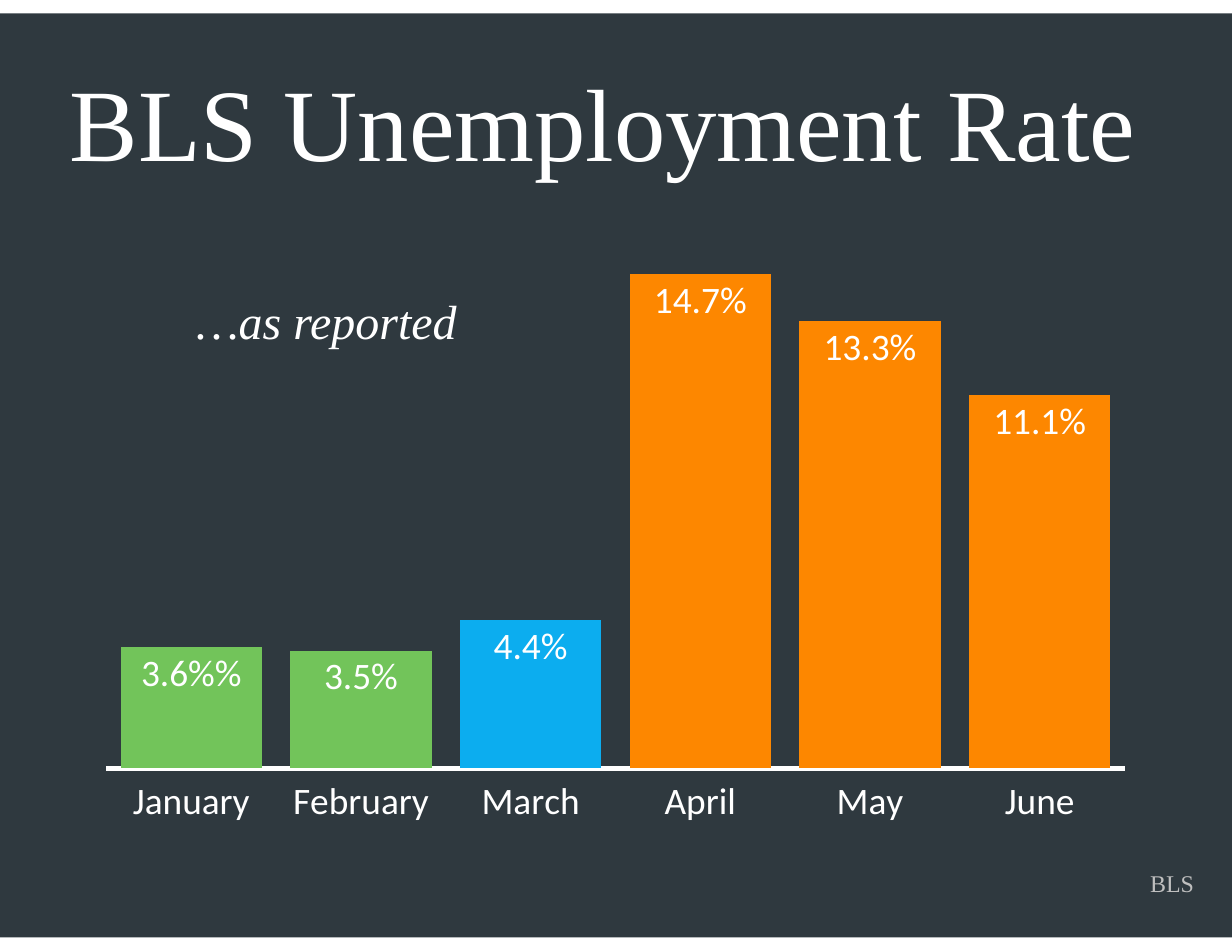
from lxml import etree
from pptx import Presentation
from pptx.chart.data import CategoryChartData
from pptx.dml.color import RGBColor
from pptx.enum.chart import (XL_CHART_TYPE as ChartType, XL_LABEL_POSITION as LabelPos,
                             XL_TICK_LABEL_POSITION as TickPos, XL_TICK_MARK as TickMark)
from pptx.enum.shapes import MSO_SHAPE
from pptx.enum.text import PP_ALIGN
from pptx.oxml.ns import qn
from pptx.util import Inches, Pt

WHITE = RGBColor(0xFF, 0xFF, 0xFF)
SLATE = RGBColor(0x2F, 0x39, 0x3F)
GREY = RGBColor(0xBF, 0xBF, 0xBF)
GREEN = RGBColor(0x72, 0xC4, 0x5A)
BLUE = RGBColor(0x0C, 0xAD, 0xEF)
ORANGE = RGBColor(0xFD, 0x87, 0x00)
SERIF, SANS = "Times New Roman", "Calibri"
WIDTH, HEIGHT = 11, 8.5

# Content: month, unemployment rate, bar colour
RATES = [
    ("January", 0.036, GREEN),
    ("February", 0.035, GREEN),
    ("March", 0.044, BLUE),
    ("April", 0.147, ORANGE),
    ("May", 0.133, ORANGE),
    ("June", 0.111, ORANGE),
]
CUSTOM_LABELS = {0: "3.6%%"}
# Text, box, alignment, wrap, font; the title's last space shifts its centring
TEXTS = [
    ("BLS", (10.16, 7.71, 0.6, 0.36), PP_ALIGN.RIGHT, False,
     {"size": Pt(15.4), "name": SERIF}, GREY),
    ("BLS Unemployment Rate ", (0, 0.48, WIDTH, 1.21), PP_ALIGN.CENTER, True,
     {"size": Pt(66), "name": SERIF}, WHITE),
    ("…as reported", (0.77, 2.55, 4.29, 0.62), PP_ALIGN.CENTER, True,
     {"size": Pt(30.8), "name": SERIF, "italic": True}, WHITE),
]
CHART_BOX = (0.8, 2.03, 9.43, 5.69)
PLOT = {"x": 0.016, "y": 0.005, "w": 0.964, "h": 0.844}  # shares of the chart
CHART_FONT = {"size": Pt(24), "name": SANS}


def set_font(font, values, color):
    for key, value in values.items():
        setattr(font, key, value)
    font.color.rgb = color


def add_text(slide, text, box, align, wrap, values, color):
    tf = slide.shapes.add_textbox(*map(Inches, box)).text_frame
    tf.word_wrap = wrap
    p = tf.paragraphs[0]
    p.alignment = align
    r = p.add_run()
    r.text = text
    set_font(r.font, values, color)


def set_plot_layout(chart):
    area = chart.plots[0]._element.getparent()
    for old in area.findall(qn("c:layout")):
        area.remove(old)
    layout = etree.Element(qn("c:layout"))
    area.insert(0, layout)
    manual = etree.SubElement(layout, qn("c:manualLayout"))
    settings = {"layoutTarget": "inner", "xMode": "edge", "yMode": "edge", **PLOT}
    for tag, value in settings.items():
        etree.SubElement(manual, qn(f"c:{tag}")).set("val", str(value))


def add_rate_chart(slide):
    data = CategoryChartData(number_format="0.0%")
    data.categories = [month for month, _, _ in RATES]
    data.add_series("Series 1", [rate for _, rate, _ in RATES])
    chart = slide.shapes.add_chart(ChartType.COLUMN_STACKED,
                                   *map(Inches, CHART_BOX), data).chart
    chart.has_legend = chart.has_title = False
    set_font(chart.font, CHART_FONT, WHITE)
    set_plot_layout(chart)

    # Axes
    months, rates = chart.category_axis, chart.value_axis
    months.major_tick_mark = months.minor_tick_mark = TickMark.NONE
    months.tick_label_position = TickPos.LOW
    set_font(months.tick_labels.font, CHART_FONT, WHITE)
    months.format.line.color.rgb = WHITE
    months.format.line.width = Pt(3)
    rates.minimum_scale, rates.maximum_scale = 0, 0.16
    rates.has_major_gridlines = rates.visible = False

    # Bars
    plot = chart.plots[0]
    plot.gap_width, plot.overlap, plot.vary_by_categories = 20, 100, False
    series = plot.series[0]
    series.format.fill.solid()
    series.format.fill.fore_color.rgb = ORANGE
    for i, (_, _, color) in enumerate(RATES):
        if color != ORANGE:
            fill = series.points[i].format.fill
            fill.solid()
            fill.fore_color.rgb = color

    # Bar labels
    labels = series.data_labels
    labels.show_value = True
    labels.number_format, labels.number_format_is_linked = "0.0%", False
    labels.position = LabelPos.INSIDE_END
    set_font(labels.font, CHART_FONT, WHITE)
    for i, text in CUSTOM_LABELS.items():
        label = series.points[i].data_label
        r = label.text_frame.paragraphs[0].add_run()
        r.text = text
        set_font(r.font, CHART_FONT, WHITE)
        label.position = LabelPos.INSIDE_END


prs = Presentation()
prs.slide_width, prs.slide_height = Inches(WIDTH), Inches(HEIGHT)
s = prs.slides.add_slide(prs.slide_layouts[6])

# Dark panel
panel = s.shapes.add_shape(MSO_SHAPE.RECTANGLE, 0, Inches(0.12), Inches(WIDTH), Inches(8.25))
panel.shadow.inherit = False
panel.fill.solid()
panel.fill.fore_color.rgb = SLATE
panel.line.fill.background()

# Chart and texts
add_rate_chart(s)
for item in TEXTS:
    add_text(s, *item)

prs.save("out.pptx")
